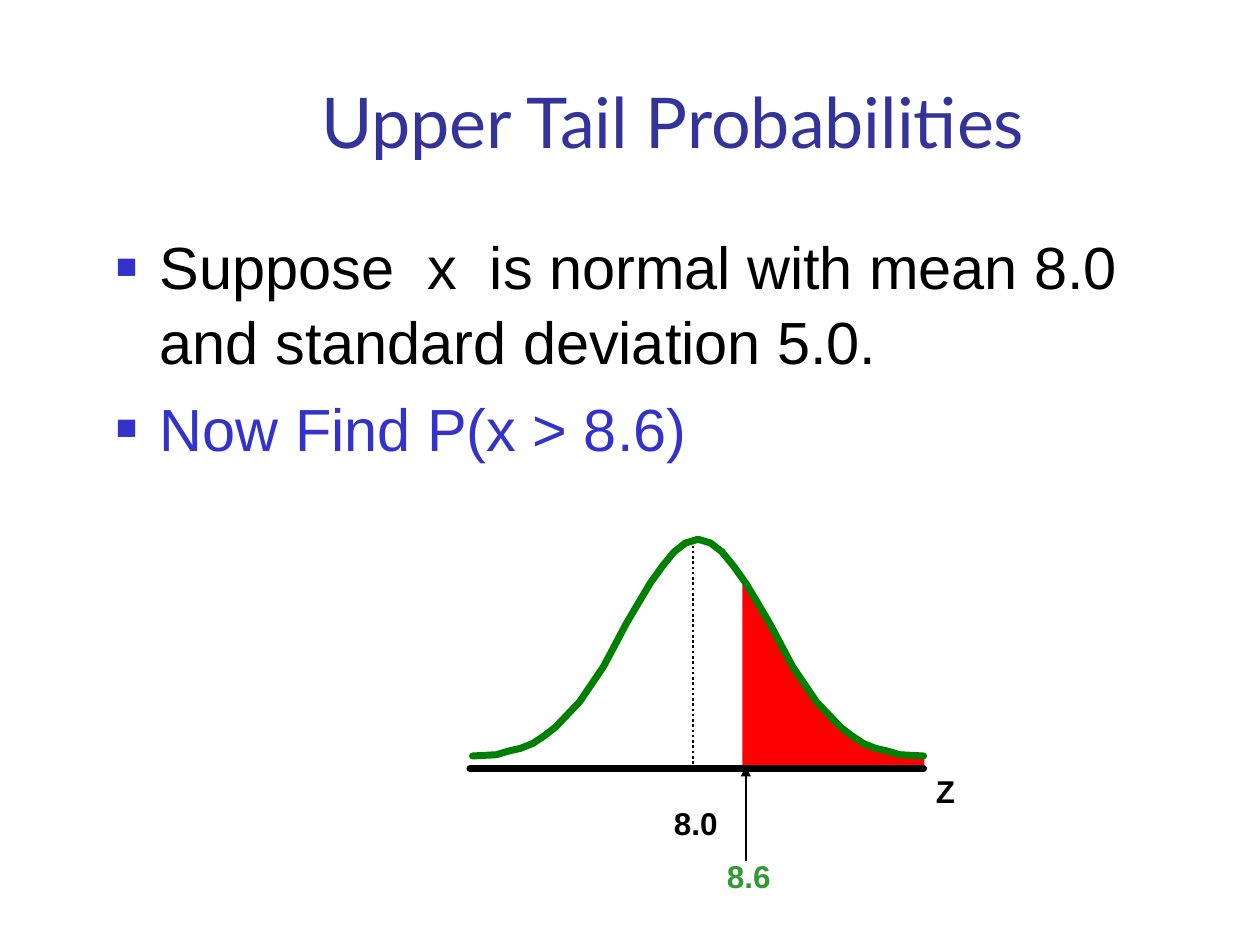
from dataclasses import dataclass
from typing import Optional

from lxml import etree
from pptx import Presentation
from pptx.dml.color import RGBColor
from pptx.enum.dml import MSO_LINE
from pptx.enum.shapes import MSO_CONNECTOR
from pptx.enum.text import MSO_ANCHOR, PP_ALIGN
from pptx.oxml.ns import qn
from pptx.util import Inches, Pt

STRAIGHT = MSO_CONNECTOR.STRAIGHT
DOTTED = MSO_LINE.ROUND_DOT
LEFT, CENTER = PP_ALIGN.LEFT, PP_ALIGN.CENTER
TOP, BOTTOM = MSO_ANCHOR.TOP, MSO_ANCHOR.BOTTOM

BLACK = RGBColor(0x00, 0x00, 0x00)
NAVY = RGBColor(0x33, 0x33, 0x99)
BLUE = RGBColor(0x33, 0x33, 0xCC)
RED = RGBColor(0xFF, 0x00, 0x00)
CURVE_GREEN = RGBColor(0x00, 0x80, 0x00)
LABEL_GREEN = RGBColor(0x33, 0x99, 0x33)

# Grid: 100 columns by 75 rows over the whole slide
WIDTH, HEIGHT = Inches(10), Inches(7.5)
COL, ROW = WIDTH / 100, HEIGHT / 75
MEAN_COL, AXIS_ROW = 55.4, 61

# Half of the bell curve: columns from the mean, row
HALF_BELL = [(0, 42.8), (1, 43.1), (1.9, 43.8), (2.8, 44.9), (3.8, 46.3),
             (4.7, 47.8), (5.7, 49.5), (7.5, 52.9), (9.4, 55.7),
             (11.3, 57.7), (12.2, 58.4), (13.1, 59), (14.1, 59.4),
             (15, 59.6), (16, 59.9), (17.9, 60)]
# Upper edge of the shaded tail: column, row
TAIL_EDGE = [(59, 45.7), (59.4, 46.9), (60.4, 48.4), (61, 49.8),
             (61.7, 50.8), (62.4, 52.3), (63.7, 54.3), (64.8, 55.8),
             (66.6, 57.7), (69.5, 59.4), (73.3, 60)]


@dataclass
class Label:
    text: str
    col: float
    row: float
    width: float
    color: RGBColor = BLACK
    wrap: bool = False


@dataclass
class Rule:
    start: tuple[float, float]
    end: tuple[float, float]
    weight: float
    dash: Optional[int] = None
    arrow: bool = False
    cap: str = "flat"


LABELS = [Label("Z", 73.3, 60.8, 4.2, wrap=True),
          Label("8.6", 56.7, 67.5, 5.5, LABEL_GREEN),
          Label("8.0", 52.5, 63.3, 5.5)]
RULES = [Rule((37.3, AXIS_ROW), (73.3, AXIS_ROW), 4, cap="rnd"),
         Rule((59.2, 68.3), (59.2, 60.8), 1, arrow=True),
         Rule((55, 43.3), (55, 60.8), 1.5, dash=DOTTED)]


def at(col: float, row: float) -> tuple[int, int]:
    return round(col * COL), round(row * ROW)


def add_bullet(p, color: RGBColor) -> None:
    pPr = p._p.get_or_add_pPr()
    pPr.set("marL", str(Inches(0.35)))
    pPr.set("indent", str(-Inches(0.35)))
    clr = etree.SubElement(pPr, qn("a:buClr"))
    etree.SubElement(clr, qn("a:srgbClr"), val=str(color))
    etree.SubElement(pPr, qn("a:buSzPct"), val="60000")
    etree.SubElement(pPr, qn("a:buFont"), typeface="Arial")
    etree.SubElement(pPr, qn("a:buChar"), char="■")


def add_text(s, box: tuple, lines: list, *, size: float, font: str = "Arial",
             bold: bool = False, align=LEFT, anchor=TOP, wrap: bool = True,
             inset: float = 0.1, bullet: Optional[RGBColor] = None,
             spacing: float = 1.0, gap: float = 0) -> None:
    """Place (text, colour) lines in a box of column, row, width, height."""
    tf = s.shapes.add_textbox(*at(*box[:2]), *at(*box[2:])).text_frame
    tf.word_wrap, tf.vertical_anchor = wrap, anchor
    tf.margin_left = tf.margin_right = Inches(inset)
    tf.margin_top = tf.margin_bottom = Inches(0.05)
    for i, (text, color) in enumerate(lines):
        p = tf.add_paragraph() if i else tf.paragraphs[0]
        if bullet is not None:
            add_bullet(p, bullet)
        p.alignment, p.line_spacing = align, spacing
        p.space_before = Pt(gap if i else 0)
        r = p.add_run()
        r.text = text
        r.font.name, r.font.size, r.font.bold = font, Pt(size), bold
        r.font.color.rgb = color


def add_path(s, points: list, *, line: RGBColor, weight: float,
             fill: Optional[RGBColor] = None) -> None:
    """Draw an outline through grid points, closed when it has a fill."""
    builder = s.shapes.build_freeform(*at(*points[0]))
    builder.add_line_segments([at(*pt) for pt in points[1:]],
                              close=fill is not None)
    sp = builder.convert_to_shape()
    sp.shadow.inherit = False
    if fill is None:
        sp.fill.background()
    else:
        sp.fill.solid()
        sp.fill.fore_color.rgb = fill
    sp.line.color.rgb, sp.line.width = line, Pt(weight)
    ln = sp.line._get_or_add_ln()
    ln.set("cap", "rnd")
    etree.SubElement(ln, qn("a:round"))


def add_rule(s, rule: Rule) -> None:
    c = s.shapes.add_connector(STRAIGHT, *at(*rule.start), *at(*rule.end))
    c.line.color.rgb, c.line.width = BLACK, Pt(rule.weight)
    if rule.dash is not None:
        c.line.dash_style = rule.dash
    ln = c.line._get_or_add_ln()
    ln.set("cap", rule.cap)
    if rule.arrow:
        etree.SubElement(ln, qn("a:tailEnd"), type="triangle")
    etree.SubElement(c._element.spPr, qn("a:effectLst"))


def main() -> None:
    prs = Presentation()
    prs.slide_width, prs.slide_height = WIDTH, HEIGHT
    s = prs.slides.add_slide(prs.slide_layouts[6])

    # Title and statement of the problem
    add_text(s, (10.8, 4.2, 85.2, 9.2), [("Upper Tail Probabilities", NAVY)],
             size=40, font="Lato", align=CENTER, anchor=BOTTOM, inset=0.09)
    add_text(s, (8.3, 17.5, 88.3, 45),
             [("Suppose  x  is normal with mean 8.0 and standard deviation 5.0.",
               BLACK), ("Now Find P(x > 8.6)", BLUE)],
             size=34, inset=0.09, bullet=BLUE, spacing=1.05, gap=6.8)

    # Shaded upper tail under the two mirrored halves of the curve
    tail = [(59, AXIS_ROW), *TAIL_EDGE, (73.3, AXIS_ROW)]
    add_path(s, tail, line=RED, weight=1, fill=RED)
    for side in (1, -1):
        half = [(MEAN_COL + side * dx, row) for dx, row in HALF_BELL]
        add_path(s, half, line=CURVE_GREEN, weight=4)

    # Axis, pointer to 8.6 and mean line, with their labels
    for rule in RULES:
        add_rule(s, rule)
    for label in LABELS:
        add_text(s, (label.col, label.row, label.width, 4),
                 [(label.text, label.color)], size=18, bold=True,
                 wrap=label.wrap)

    prs.save("out.pptx")


if __name__ == "__main__":
    main()
